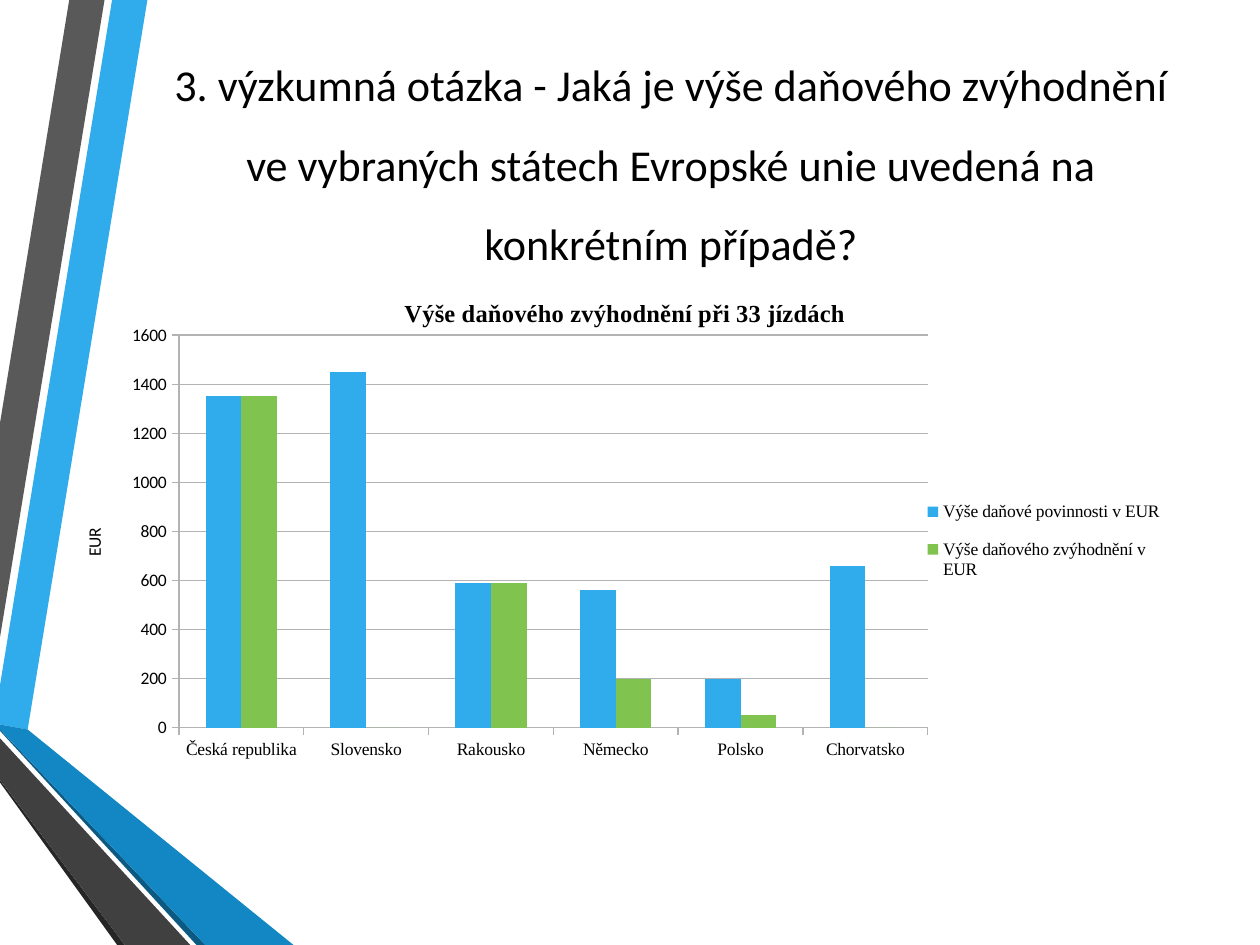
"""Build a slide with a title, a column chart and folded ribbons at the left."""
from lxml import etree
from pptx import Presentation
from pptx.chart.data import CategoryChartData
from pptx.dml.color import RGBColor
from pptx.enum.chart import XL_CHART_TYPE, XL_LEGEND_POSITION, XL_TICK_MARK
from pptx.enum.text import MSO_ANCHOR, PP_ALIGN
from pptx.oxml.ns import qn
from pptx.util import Inches, Pt

COLUMN = XL_CHART_TYPE.COLUMN_CLUSTERED
RIGHT = XL_LEGEND_POSITION.RIGHT
OUT = XL_TICK_MARK.OUTSIDE
MIDDLE = MSO_ANCHOR.MIDDLE
CENTER = PP_ALIGN.CENTER

BLACK = RGBColor(0x00, 0x00, 0x00)
GREY = RGBColor(0xB3, 0xB3, 0xB3)
BLUE = RGBColor(0x30, 0xAC, 0xEC)
GREEN = RGBColor(0x80, 0xC3, 0x4F)
DEEP = RGBColor(0x12, 0x87, 0xC3)
NAVY = RGBColor(0x0C, 0x5A, 0x82)
STONE = RGBColor(0x59, 0x59, 0x59)
SLATE = RGBColor(0x40, 0x40, 0x40)
COAL = RGBColor(0x26, 0x26, 0x26)

SANS = "Calibri"
SERIF = "Times New Roman"

RIBBONS = [
    (BLUE, [(0, 5.44), (0, 5.75), (0.22, 5.79), (1.17, 0), (0.89, 0)]),
    (STONE, [(0.83, 0), (0.55, 0), (0, 3.36), (0, 5.06)]),
    (COAL, [(0, 6.19), (0, 6.21), (0.93, 7.5), (0.99, 7.5)]),
    (NAVY, [(0, 5.79), (0, 5.8), (1.56, 7.5), (1.63, 7.5)]),
    (DEEP, [(0, 5.79), (1.63, 7.5), (2.33, 7.5), (0.22, 5.79), (0, 5.75)]),
    (SLATE, [(0, 6.19), (0.99, 7.5), (1.51, 7.5), (0, 5.86)]),
]

TITLE = ("3. výzkumná otázka - Jaká je výše daňového zvýhodnění ve vybraných "
         "státech Evropské unie uvedená na konkrétním případě?")
STATES = ["Česká republika", "Slovensko", "Rakousko", "Německo", "Polsko",
          "Chorvatsko"]
SERIES = [
    ("Výše daňové povinnosti v EUR", BLUE, [1350, 1450, 590, 560, 200, 660]),
    ("Výše daňového zvýhodnění v EUR", GREEN, [1350, 0, 590, 200, 50, 0]),
]


def style(font, name, size, bold=False):
    """Set a black font of the given face and size."""
    font.name = name
    font.size = Pt(size)
    font.bold = bold
    font.color.rgb = BLACK


def add_ribbon(slide, color, points):
    """Draw one filled ribbon through points given in inches."""
    spots = [(Inches(x), Inches(y)) for x, y in points]
    pen = slide.shapes.build_freeform(*spots[0])
    pen.add_line_segments(spots[1:], close=True)
    shape = pen.convert_to_shape()
    shape.shadow.inherit = False
    shape.fill.solid()
    shape.fill.fore_color.rgb = color
    shape.line.fill.background()


def add_title(slide):
    """Add the centred slide title."""
    box = slide.shapes.add_textbox(
        Inches(1.14), Inches(0.21), Inches(8.37), Inches(1.97))
    frame = box.text_frame
    frame.word_wrap = True
    frame.vertical_anchor = MIDDLE
    frame.text = TITLE
    para = frame.paragraphs[0]
    para.alignment = CENTER
    para.line_spacing = 1.5
    style(para.runs[0].font, SANS, 25.2)


def make_layout(area, inner=False):
    """Return a manual chart layout for x, y, w, h fractions."""
    layout = etree.Element(qn("c:layout"))
    manual = etree.SubElement(layout, qn("c:manualLayout"))
    rules = [("layoutTarget", "inner")] if inner else []
    rules += [("xMode", "edge"), ("yMode", "edge")]
    rules += zip("xywh", area)
    for tag, value in rules:
        etree.SubElement(manual, qn(f"c:{tag}")).set("val", str(value))
    return layout


def label(owner, text, name, size, bold=False):
    """Write and style the title of a chart or an axis."""
    frame = owner.text_frame
    frame.text = text
    style(frame.paragraphs[0].runs[0].font, name, size, bold)


def format_axes(chart):
    """Style both axes, the gridlines and the value title."""
    for axis, name in ((chart.category_axis, SERIF), (chart.value_axis, SANS)):
        axis.major_tick_mark = OUT
        axis.format.line.color.rgb = GREY
        style(axis.tick_labels.font, name, 10)
    value = chart.value_axis
    value.minimum_scale = 0
    value.maximum_scale = 1600
    value.major_unit = 200
    value.has_major_gridlines = True
    value.major_gridlines.format.line.color.rgb = GREY
    label(value.axis_title, "EUR", SANS, 10)


def add_chart(slide):
    """Add the chart of tax due and tax relief by state."""
    data = CategoryChartData(number_format="General")
    data.categories = STATES
    for name, _, values in SERIES:
        data.add_series(name, values)
    chart = slide.shapes.add_chart(
        COLUMN, Inches(0.59), Inches(2.18), Inches(8.74), Inches(4.49),
        data).chart
    style(chart.font, SANS, 10)
    label(chart.chart_title, "Výše daňového zvýhodnění při 33 jízdách",
          SERIF, 14, True)
    chart.chart_title.include_in_layout = False
    format_axes(chart)

    plot = chart.plots[0]
    plot.vary_by_categories = False
    plot.gap_width = 150
    plot.overlap = 0
    for bars, (_, color, _) in zip(plot.series, SERIES):
        bars.format.fill.solid()
        bars.format.fill.fore_color.rgb = color

    chart.has_legend = True
    chart.legend.position = RIGHT
    chart.legend.include_in_layout = False
    style(chart.legend.font, SERIF, 10)

    root = chart._chartSpace.chart
    area = root.find(qn("c:plotArea"))
    for old in area.findall(qn("c:layout")):
        area.remove(old)
    area.insert(0, make_layout((0.095, 0.107, 0.68, 0.694), inner=True))
    key = root.find(qn("c:legend"))
    for old in key.findall(qn("c:layout")):
        key.remove(old)
    key.find(qn("c:legendPos")).addnext(
        make_layout((0.77, 0.37, 0.22, 0.2)))


def main():
    """Build and save the slide."""
    deck = Presentation()
    deck.slide_width = Inches(10)
    deck.slide_height = Inches(7.5)
    slide = deck.slides.add_slide(deck.slide_layouts[6])
    for color, points in RIBBONS:
        add_ribbon(slide, color, points)
    add_title(slide)
    add_chart(slide)
    deck.save("out.pptx")


if __name__ == "__main__":
    main()
